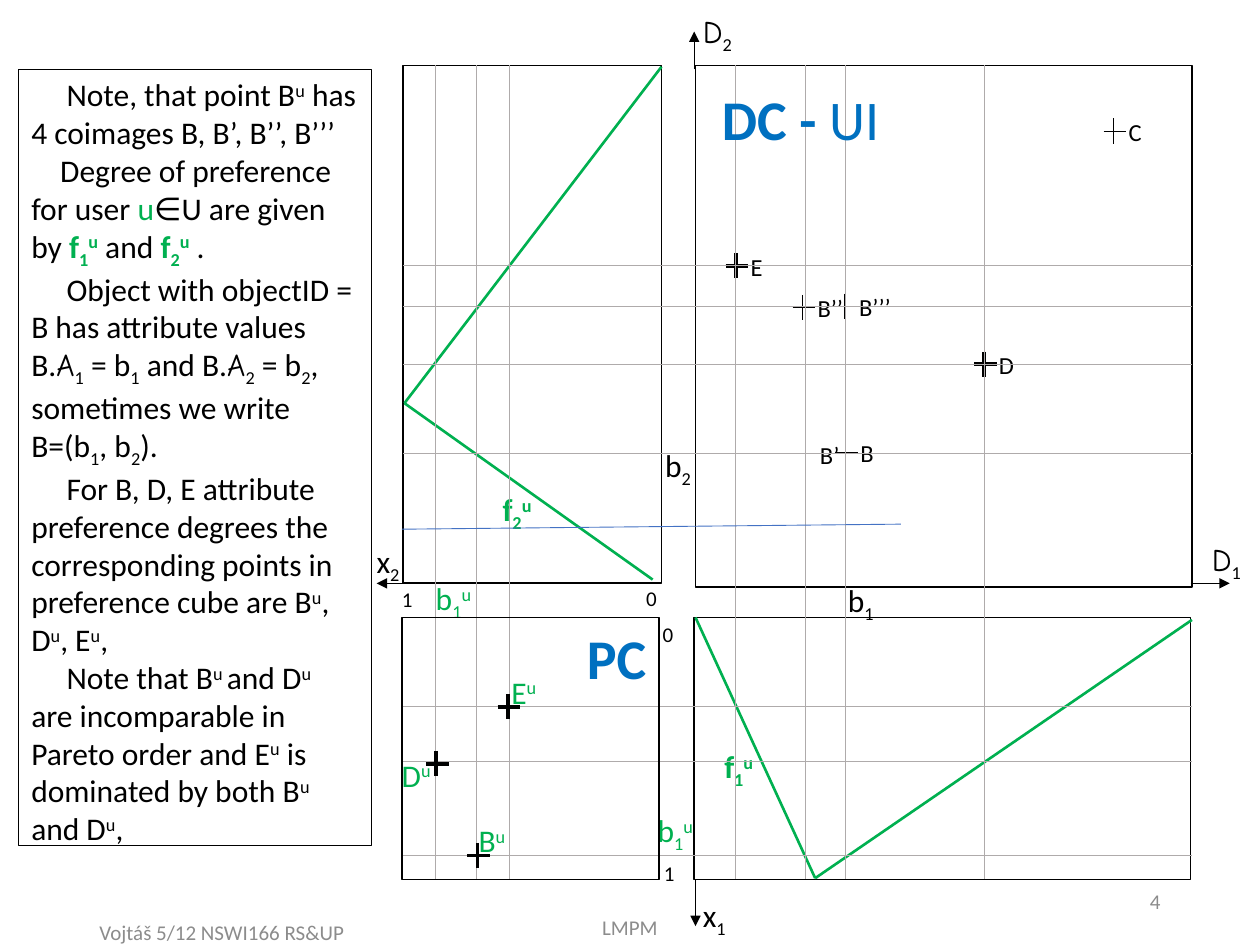
from lxml.etree import SubElement
from pptx import Presentation
from pptx.dml.color import RGBColor
from pptx.enum.shapes import MSO_CONNECTOR as Connector, MSO_SHAPE as Shape
from pptx.enum.text import MSO_ANCHOR as Anchor, MSO_AUTO_SIZE as AutoSize, PP_ALIGN as Align
from pptx.oxml.ns import qn
from pptx.util import Inches, Pt

BLACK = RGBColor(0x00, 0x00, 0x00)
GREEN = RGBColor(0x00, 0xB0, 0x50)
BLUE = RGBColor(0x00, 0x70, 0xC0)
THIN_BLUE = RGBColor(0x44, 0x72, 0xC4)
GRID_GREY = RGBColor(0xAF, 0xAB, 0xAB)
FOOTER_GREY = RGBColor(0x8C, 0x8C, 0x8C)

NOTE_BOX = (0.15, 0.55, 2.8, 6.16)
F2_BOX = (3.2, 0.52, 2.05, 4.11)
DATA_BOX = (5.52, 0.52, 3.94, 4.14)
PREFERENCE_BOX = (3.19, 4.9, 2.04, 2.08)
F1_BOX = (5.51, 4.9, 3.94, 2.08)
GRID_BOX = (3.2, 0.52, 6.26, 6.46)

BASELINES = {"_": "-25000", "^": "30000"}
NOTES = [
    (0.28, "Note, that point B|^u| has 4 coimages B, B’, B’’, B’’’"),
    (0.23, "Degree of preference|/for user |~u|∈U are given by |*f|_1|^u| and |*f|_2|^u| ."),
    (0.28, "Object with objectID = B has attribute values B.|@A|_1| = b|_1| and B.|@A|_2"
           "| = b|_2|, sometimes we write B=(b|_1|, b|_2|)."),
    (0.28, "For B, D, E attribute preference degrees the corresponding points in "
           "preference cube are B|^u|, D|^u|, E|^u|,"),
    (0.28, "Note that B|^u |and D|^u| are incomparable in Pareto order and E|^u"
           "| is dominated by both B|^u| and D|^u|,"),
]


def write_markup(para, markup, size, colour=BLACK):
    """Add runs split at bars: _ sub, ^ super, * bold green, ~ green, @ Comic Neue, / break."""
    base = {"size": Pt(size), "name": "Calibri", "bold": False}
    style, ink = base, colour
    for part in markup.split("|"):
        mark = part[0] if part[0] in "_^*~@/" else ""
        if mark == "/":
            para.add_line_break()
        if mark in BASELINES:
            style = {**style, "name": "Calibri"}
        else:
            style = {**base, "bold": mark == "*", "name": "Comic Neue" if mark == "@" else "Calibri"}
            ink = GREEN if mark and mark in "*~" else colour
        span = para.add_run()
        span.text = part[len(mark):]
        for key, value in style.items():
            setattr(span.font, key, value)
        span.font.color.rgb = ink
        if mark in BASELINES:
            span.font._element.set("baseline", BASELINES[mark])


def add_label(page, box, markup, x, y, width, height, size, colour=BLACK, wrap=False, **frame_format):
    """Place one line of text at an offset from the box."""
    label = page.shapes.add_textbox(
        Inches(box[0] + x), Inches(box[1] + y), Inches(width), Inches(height))
    frame = label.text_frame
    formats = {"word_wrap": wrap, "auto_size": AutoSize.SHAPE_TO_FIT_TEXT, **frame_format}
    align = formats.pop("align", Align.LEFT)
    for key, value in formats.items():
        setattr(frame, key, value)
    frame.paragraphs[0].alignment = align
    write_markup(frame.paragraphs[0], markup, size, colour)


def add_line(page, box, start, end, colour, width, arrow=False):
    """Draw a straight line between two offsets from the box."""
    left, top = box[:2]
    line = page.shapes.add_connector(
        Connector.STRAIGHT, Inches(left + start[0]), Inches(top + start[1]),
        Inches(left + end[0]), Inches(top + end[1]))
    line.line.color.rgb = colour
    line.line.width = Pt(width)
    if arrow:
        SubElement(line.line._get_or_add_ln(), qn("a:tailEnd"), type="triangle")
    SubElement(line._element.spPr, qn("a:effectLst"))


def add_frame(page, box, width=1):
    """Draw the unfilled black rectangle of a region."""
    frame = page.shapes.add_shape(Shape.RECTANGLE, *(Inches(side) for side in box))
    frame.shadow.inherit = False
    frame.fill.background()
    frame.line.color.rgb = BLACK
    frame.line.width = Pt(width)
    return frame


def add_cross(page, box, x, y, width):
    """Mark a point with a cross."""
    add_line(page, box, (x, y - 0.1), (x, y + 0.1), BLACK, width)
    add_line(page, box, (x - 0.08, y), (x + 0.1, y), BLACK, width)


def add_curve(page, box, points):
    """Draw a green preference function through its points."""
    for start, end in zip(points, points[1:]):
        add_line(page, box, start, end, GREEN, 1.5)


def add_notes(page, box):
    """Write the explanation in its framed box."""
    frame = add_frame(page, box, 0.75).text_frame
    formats = {"word_wrap": True, "vertical_anchor": Anchor.TOP,
               "auto_size": AutoSize.SHAPE_TO_FIT_TEXT}
    for key, value in formats.items():
        setattr(frame, key, value)
    for index, (indent, markup) in enumerate(NOTES):
        para = frame.add_paragraph() if index else frame.paragraphs[0]
        para.alignment = Align.LEFT
        para._p.get_or_add_pPr().set("indent", str(Inches(indent)))
        write_markup(para, markup, 18)


def add_data_cube(page, box):
    """Draw the data cube with its objects and axes."""
    add_frame(page, box)
    points = [("C", 3.32, 0.52, 0.5), ("E", 0.32, 1.59, 2.25), ("D", 2.29, 2.37, 2.25),
              ("B", 1.19, 3.07, 0.5), ("B’", 0.87, 3.08, 0.5),
              ("B’’", 0.85, 1.92, 0.5), ("B’’’", 1.18, 1.91, 0.5)]
    for name, x, y, width in points:
        add_cross(page, box, x, y, width)
        add_label(page, box, name, x + 0.02, y - 0.16, 0.26 + 0.05 * len(name), 0.34, 14)
    add_line(page, box, (3.93, 4.11), (4.24, 4.11), BLACK, 0.5, True)
    add_line(page, box, (-0.01, 0.03), (-0.01, -0.27), BLACK, 0.5, True)
    add_label(page, box, "@D|_1", 4, 3.72, 0.47, 0.4, 18, wrap=True)
    add_label(page, box, "@D|_2", -0.04, -0.47, 0.47, 0.4, 18, wrap=True)
    add_label(page, box, "b|_1", 1.11, 4.04, 0.42, 0.4, 18)


def add_f2_panel(page, box):
    """Draw the preference function of the second attribute."""
    add_frame(page, box)
    add_curve(page, box, [(2.05, 0.01), (0.01, 2.68), (1.98, 4.08)])
    add_line(page, box, (0, 4.11), (-0.21, 4.11), BLACK, 0.5, True)
    add_label(page, box, "x|_2", -0.31, 3.73, 0.47, 0.4, 18, wrap=True)
    add_label(page, box, "*f|_2|^u", 0.69, 3.32, 0.46, 0.4, 18)
    add_label(page, box, "b|_2", 1.98, 2.97, 0.42, 0.4, 18)
    add_label(page, box, "~b|_1|^u", 0.16, 4.03, 0.51, 0.4, 18)
    add_label(page, box, "1", -0.11, 4.09, 0.29, 0.3, 12)
    add_label(page, box, "0", 1.83, 4.08, 0.29, 0.3, 12)


def add_f1_panel(page, box):
    """Draw the preference function of the first attribute."""
    add_frame(page, box)
    add_curve(page, box, [(0.01, 0), (0.96, 2.07), (3.95, 0.02)])
    add_line(page, box, (0.01, 2.08), (0.01, 2.45), BLACK, 0.5, True)
    add_label(page, box, "x|_1", -0.03, 2.16, 0.47, 0.4, 18, wrap=True)
    add_label(page, box, "*f|_1|^u", 0.14, 0.98, 0.46, 0.4, 18)
    add_label(page, box, "~b|_1|^u", -0.39, 1.49, 0.51, 0.4, 18)
    add_label(page, box, "0", -0.35, -0.02, 0.29, 0.3, 12)
    add_label(page, box, "1", -0.34, 1.88, 0.29, 0.3, 12)


def add_preference_cube(page, box):
    """Draw the preference cube with its points."""
    add_frame(page, box)
    points = [("E", (0.84, 0.71), (0.77, 0.39)), ("B", (0.6, 1.89), (0.51, 1.57)),
              ("D", (0.27, 1.16), (-0.1, 1.05))]
    for name, centre, corner in points:
        add_cross(page, box, *centre, 2.25)
        add_label(page, box, f"~{name}|^u", *corner, 0.44, 0.4, 18)
    add_label(page, box, "PC", 1.37, 0, 0.72, 0.64, 32, BLUE, True)
    page.shapes[-1].text_frame.paragraphs[0].runs[0].font.bold = True


def add_grid(page, box):
    """Draw the projection lines across all panels."""
    width, height = box[2:]
    for x in (0.26, 0.58, 0.84, 2.64, 3.19, 3.51, 4.61):
        add_line(page, box, (x, 0), (x, height), GRID_GREY, 0.5)
    for y in (1.59, 1.91, 2.37, 3.08, 5.09, 5.52, 6.27):
        add_line(page, box, (0, y), (width, y), GRID_GREY, 0.5)
    add_line(page, box, (3.95, 3.64), (-0.01, 3.68), THIN_BLUE, 0.5)


def add_data_title(page, box):
    """Write the title of the data cube."""
    add_label(page, box, "DC - |UI", 0.11, 0.1, 1.55, 0.64, 32, BLUE, True)
    page.shapes[-1].text_frame.paragraphs[0].runs[0].font.bold = True


def add_footer(page, box):
    """Write the footer line with the page number."""
    for text, x, y, width, height, align in [
            ("4", 7.06, 6.95, 2.25, 0.4, Align.RIGHT),
            ("Vojtáš 5/12 NSWI166 RS&UP", 0.69, 7.3, 2.25, 0.2, Align.LEFT),
            ("LMPM", 3.31, 7.22, 3.38, 0.28, Align.CENTER)]:
        add_label(page, box, text, x, y, width, height, 12, FOOTER_GREY, True,
                  auto_size=AutoSize.NONE, vertical_anchor=Anchor.MIDDLE, align=align)


def main():
    """Build the slide and save it."""
    deck = Presentation()
    deck.slide_width, deck.slide_height = Inches(10), Inches(7.5)
    page = deck.slides.add_slide(deck.slide_layouts[6])
    regions = [(add_notes, NOTE_BOX), (add_data_cube, DATA_BOX), (add_f2_panel, F2_BOX),
               (add_f1_panel, F1_BOX), (add_grid, GRID_BOX),
               (add_preference_cube, PREFERENCE_BOX), (add_data_title, DATA_BOX),
               (add_footer, (0, 0))]
    for add_region, box in regions:
        add_region(page, box)
    deck.save("out.pptx")


if __name__ == "__main__":
    main()
